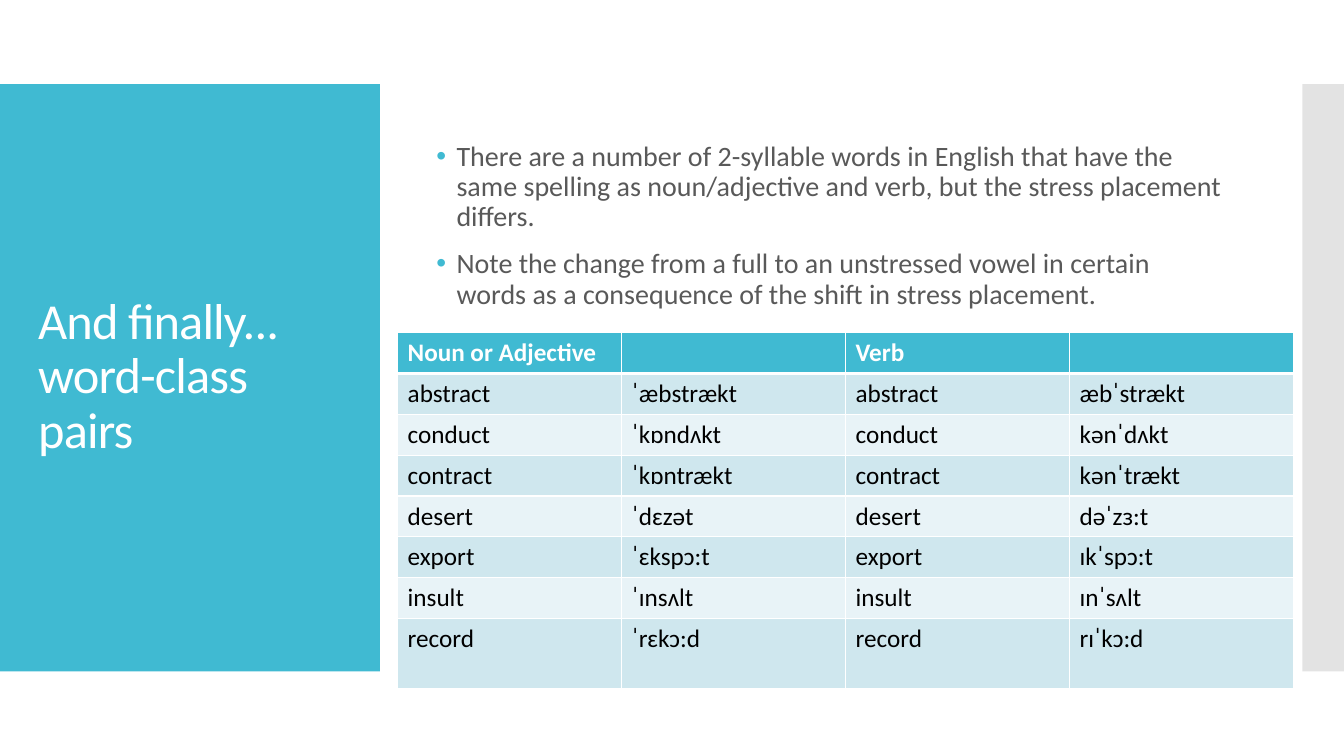
from lxml.etree import SubElement
from pptx import Presentation
from pptx.dml.color import RGBColor
from pptx.enum.shapes import MSO_SHAPE
from pptx.enum.text import MSO_ANCHOR, MSO_AUTO_SIZE, PP_ALIGN
from pptx.oxml import parse_xml
from pptx.oxml.ns import nsdecls, qn
from pptx.util import Pt

TEAL = RGBColor(0x40, 0xBA, 0xD2)
GREY = RGBColor(0xC8, 0xC8, 0xC8)
TEXT_GREY = RGBColor(0x59, 0x59, 0x59)
WHITE = RGBColor(0xFF, 0xFF, 0xFF)
BLACK = RGBColor(0, 0, 0)
BAND_DARK = RGBColor(0xCF, 0xE7, 0xEE)
BAND_LIGHT = RGBColor(0xE8, 0xF3, 0xF7)

POINTS = [
    "There are a number of 2-syllable words in English that have the same spelling "
    "as noun/adjective and verb, but the stress placement differs.",
    "Note the change from a full to an unstressed vowel in certain words "
    "as a consequence of the shift in stress placement.",
]
PAIRS = [
    ("abstract", "ˈæbstrækt", "æbˈstrækt"),
    ("conduct", "ˈkɒndʌkt", "kənˈdʌkt"),
    ("contract", "ˈkɒntrækt", "kənˈtrækt"),
    ("desert", "ˈdɛzət", "dəˈzɜ:t"),
    ("export", "ˈɛkspɔ:t", "ɪkˈspɔ:t"),
    ("insult", "ˈɪnsʌlt", "ɪnˈsʌlt"),
    ("record", "ˈrɛkɔ:d", "rɪˈkɔ:d"),
]


def style_text(paragraph, size, color, bold=False):
    for span in paragraph.runs:
        span.font.name = "Calibri"
        span.font.size = Pt(size)
        span.font.color.rgb = color
        span.font.bold = bold


def place(shape, left, top, width, height):
    shape.left, shape.top = Pt(left), Pt(top)
    shape.width, shape.height = Pt(width), Pt(height)
    shape.text_frame.word_wrap = True
    shape.text_frame.auto_size = MSO_AUTO_SIZE.NONE


deck = Presentation()
deck.slide_width, deck.slide_height = Pt(960), Pt(540)
page = deck.slides.add_slide(deck.slide_layouts[1])
title, body = page.placeholders

for left, width, color in [(0, 271.3, TEAL), (930.3, 29.7, GREY)]:
    panel = page.shapes.add_shape(MSO_SHAPE.RECTANGLE, Pt(left), Pt(60), Pt(width), Pt(419.5))
    panel.shadow.inherit = False
    panel.fill.solid()
    panel.fill.fore_color.rgb = color
    panel.line.fill.background()
    title._element.addprevious(panel._element)
tint = panel._element.spPr.find(qn("a:solidFill")).find(qn("a:srgbClr"))
SubElement(tint, qn("a:alpha"), val="50000")

place(title, 20, 88.5, 232, 362)
title.text_frame.vertical_anchor = MSO_ANCHOR.MIDDLE
heading = title.text_frame.paragraphs[0]
heading.text = "And finally... word-class\vpairs"
heading.alignment = PP_ALIGN.LEFT
heading.line_spacing = 0.9
style_text(heading, 36, WHITE)
for span in heading.runs:
    span.font._element.set("spc", "-60")

place(body, 304.5, 67.5, 576, 403)
body.text_frame.vertical_anchor = MSO_ANCHOR.TOP
body.text_frame.margin_top = Pt(34)
body.text_frame.text = "\n".join(POINTS)
for para in body.text_frame.paragraphs:
    para.line_spacing = 0.9
    para.space_before = Pt(12)
    style_text(para, 20, TEXT_GREY)
    settings = para._element.get_or_add_pPr()
    settings.set("marL", str(Pt(14.4)))
    settings.set("indent", str(-Pt(14.4)))
    bullet_color = SubElement(settings, qn("a:buClr"))
    SubElement(bullet_color, qn("a:srgbClr"), val=str(TEAL))
    SubElement(settings, qn("a:buFont"), typeface="Arial")
    SubElement(settings, qn("a:buChar"), char="•")

rows = [("Noun or Adjective", "", "Verb", "")]
rows += [(word, noun, word, verb) for word, noun, verb in PAIRS]
table = page.shapes.add_table(len(rows), 4, Pt(284), Pt(237.5), Pt(640), Pt(254.4)).table
for row in table.rows:
    row.height = Pt(29.2)
table.rows[len(rows) - 1].height = Pt(50)

for row_index, values in enumerate(rows):
    header = row_index == 0
    band = TEAL if header else BAND_DARK if row_index % 2 else BAND_LIGHT
    for column_index, value in enumerate(values):
        cell = table.cell(row_index, column_index)
        cell.text = value
        style_text(cell.text_frame.paragraphs[0], 18, WHITE if header else BLACK, header)
        cell.fill.solid()
        cell.fill.fore_color.rgb = band
        borders = {"lnL": 1, "lnR": 1, "lnT": 3 if row_index == 1 else 1, "lnB": 3 if header else 1}
        for position, (side, weight) in enumerate(borders.items()):
            border = parse_xml(
                f'<a:{side} {nsdecls("a")} w="{Pt(weight)}"><a:solidFill>'
                f'<a:srgbClr val="{WHITE}"/></a:solidFill></a:{side}>'
            )
            cell._tc.get_or_add_tcPr().insert(position, border)

deck.save("out.pptx")
